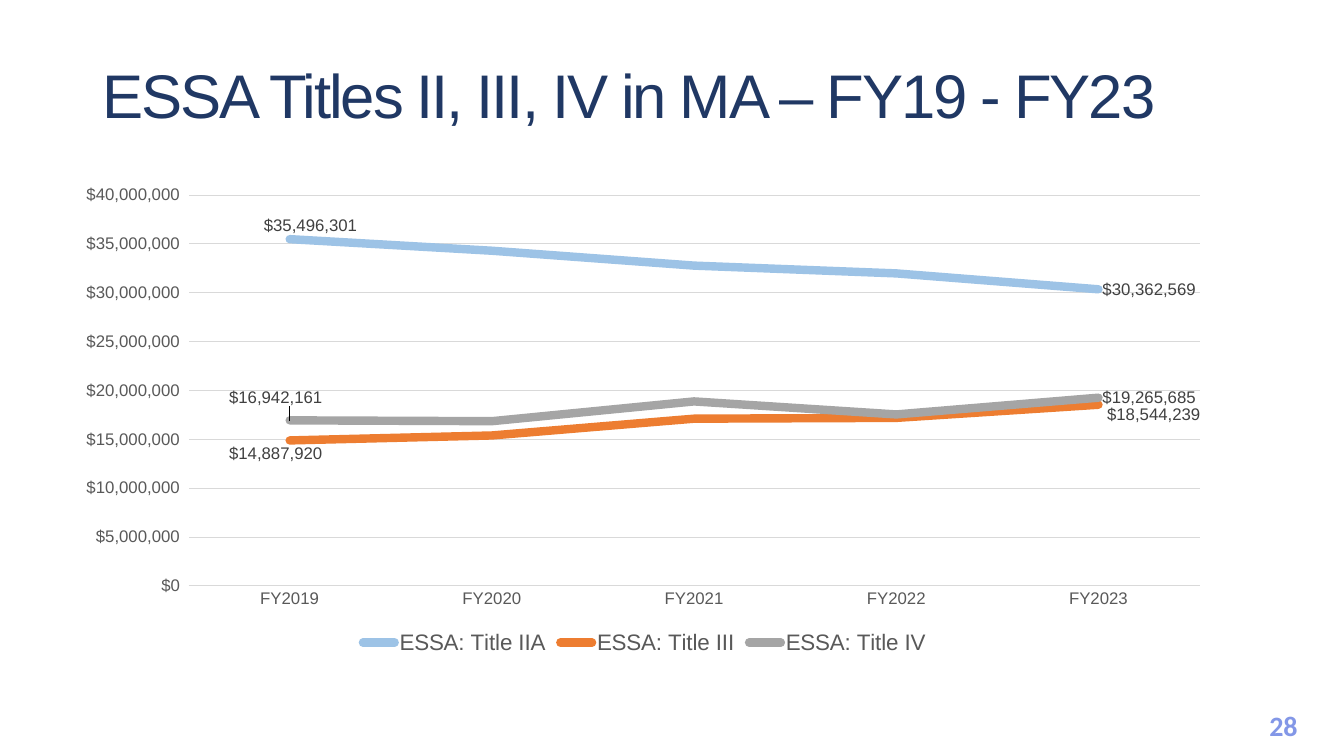
"""Build the slide on ESSA Titles II, III and IV funding in Massachusetts."""
from lxml.etree import SubElement
from pptx import Presentation
from pptx.chart.data import CategoryChartData
from pptx.dml.color import RGBColor
from pptx.enum.chart import XL_CHART_TYPE, XL_LABEL_POSITION, XL_LEGEND_POSITION, XL_TICK_MARK
from pptx.enum.text import MSO_ANCHOR, PP_ALIGN
from pptx.oxml import parse_xml
from pptx.oxml.ns import nsdecls, qn
from pptx.util import Inches, Pt


def style(font, size, color, name="Arial", bold=False):
    font.size, font.name, font.bold = Pt(size), name, bold
    font.color.rgb = RGBColor.from_string(color)


def write(frame, text, size, color, name="Arial", bold=False, align=PP_ALIGN.LEFT, spacing=0):
    frame.word_wrap = True
    para = frame.paragraphs[0]
    para.alignment = align
    span = para.add_run()
    span.text = text
    style(span.font, size, color, name, bold)
    if spacing:
        span.font._element.set("spc", str(spacing))
    return para


deck = Presentation()
deck.slide_width, deck.slide_height = Inches(13.33), Inches(7.5)
page = deck.slides.add_slide(deck.slide_layouts[5])

title = page.shapes.title
title.left, title.top, title.width, title.height = Inches(0.92), Inches(0.41), Inches(11.5), Inches(1.14)
title.text_frame.vertical_anchor = MSO_ANCHOR.MIDDLE
heading = write(title.text_frame, "ESSA Titles II, III, IV in MA – FY19 - FY23", 44, "203864", spacing=-150)
heading.line_spacing = 0.9

number = page.shapes.add_textbox(Inches(12.42), Inches(6.98), Inches(0.62), Inches(0.44))
write(number.text_frame, "28", 20, "8397E7", name="Calibri", bold=True, align=PP_ALIGN.CENTER)

ABOVE, BELOW, RIGHT = XL_LABEL_POSITION.ABOVE, XL_LABEL_POSITION.BELOW, XL_LABEL_POSITION.RIGHT
MONEY = '"$"#,##0_);[Red]\\("$"#,##0\\)'
# name, color, values, and per labelled point: position, x shift, y shift
funding = [
    ("ESSA: Title IIA", "9DC3E6", (35496301, 34309648, 32788722, 31989107, 30362569),
     {0: (ABOVE, 0.02, 0), 4: (RIGHT, 0, 0)}),
    ("ESSA: Title III", "ED7D31", (14887920, 15395832, 17114993, 17199595, 18544239),
     {0: (BELOW, -0.01, 0), 4: (RIGHT, 0.004, 0.02)}),
    ("ESSA: Title IV", "A5A5A5", (16942161, 16857655, 18884495, 17554055, 19265685),
     {0: (ABOVE, -0.01, -0.02), 4: (RIGHT, 0, 0)}),
]
data = CategoryChartData(number_format=MONEY)
data.categories = [f"FY{year}" for year in range(2019, 2024)]
for name, color, values, labels in funding:
    data.add_series(name, values)
chart = page.shapes.add_chart(
    XL_CHART_TYPE.LINE, Inches(0.64), Inches(1.76), Inches(11.5), Inches(4.78), data).chart
style(chart.font, 10, "000000")
chart.has_title = False
chart.has_legend = True
chart.legend.position = XL_LEGEND_POSITION.BOTTOM
chart.legend.include_in_layout = False
style(chart.legend.font, 16, "595959")

plot_area = chart._chartSpace.chart.plotArea
for old in plot_area.findall(qn("c:layout")):
    plot_area.remove(old)
plot_area.insert(0, parse_xml(
    f'<c:layout {nsdecls("c")}><c:manualLayout><c:layoutTarget val="inner"/>'
    '<c:xMode val="edge"/><c:yMode val="edge"/><c:x val="0.107"/><c:y val="0.037"/>'
    '<c:w val="0.872"/><c:h val="0.811"/></c:manualLayout></c:layout>'))

amounts, years = chart.value_axis, chart.category_axis
for axis in (amounts, years):
    axis.major_tick_mark = axis.minor_tick_mark = XL_TICK_MARK.NONE
    style(axis.tick_labels.font, 12, "595959")
amounts.minimum_scale, amounts.maximum_scale, amounts.major_unit = 0, 40000000, 5000000
amounts.tick_labels.number_format = MONEY
amounts.tick_labels.number_format_is_linked = False
amounts.format.line.fill.background()
amounts.has_major_gridlines = True
for line in (amounts.major_gridlines.format.line, years.format.line):
    line.width = Pt(0.75)
    line.color.rgb = RGBColor.from_string("D9D9D9")

chart.plots[0].vary_by_categories = False
for series, (name, color, values, labels) in zip(chart.plots[0].series, funding):
    series.smooth = False
    series.format.line.width = Pt(6)
    series.format.line.color.rgb = RGBColor.from_string(color)
    series._element.spPr.find(qn("a:ln")).set("cap", "rnd")
    series.data_labels.show_value = False
    for index, (position, shift_x, shift_y) in labels.items():
        label = series.points[index].data_label
        style(label.font, 12, "404040")
        label.position = position
        if shift_x or shift_y:
            element = series._element.xpath(f'c:dLbls/c:dLbl[c:idx/@val="{index}"]')[0]
            layout = parse_xml(f'<c:layout {nsdecls("c")}/>')
            manual = SubElement(layout, qn("c:manualLayout"))
            SubElement(manual, qn("c:x")).set("val", str(shift_x))
            SubElement(manual, qn("c:y")).set("val", str(shift_y))
            element.insert(1, layout)

deck.save("out.pptx")
